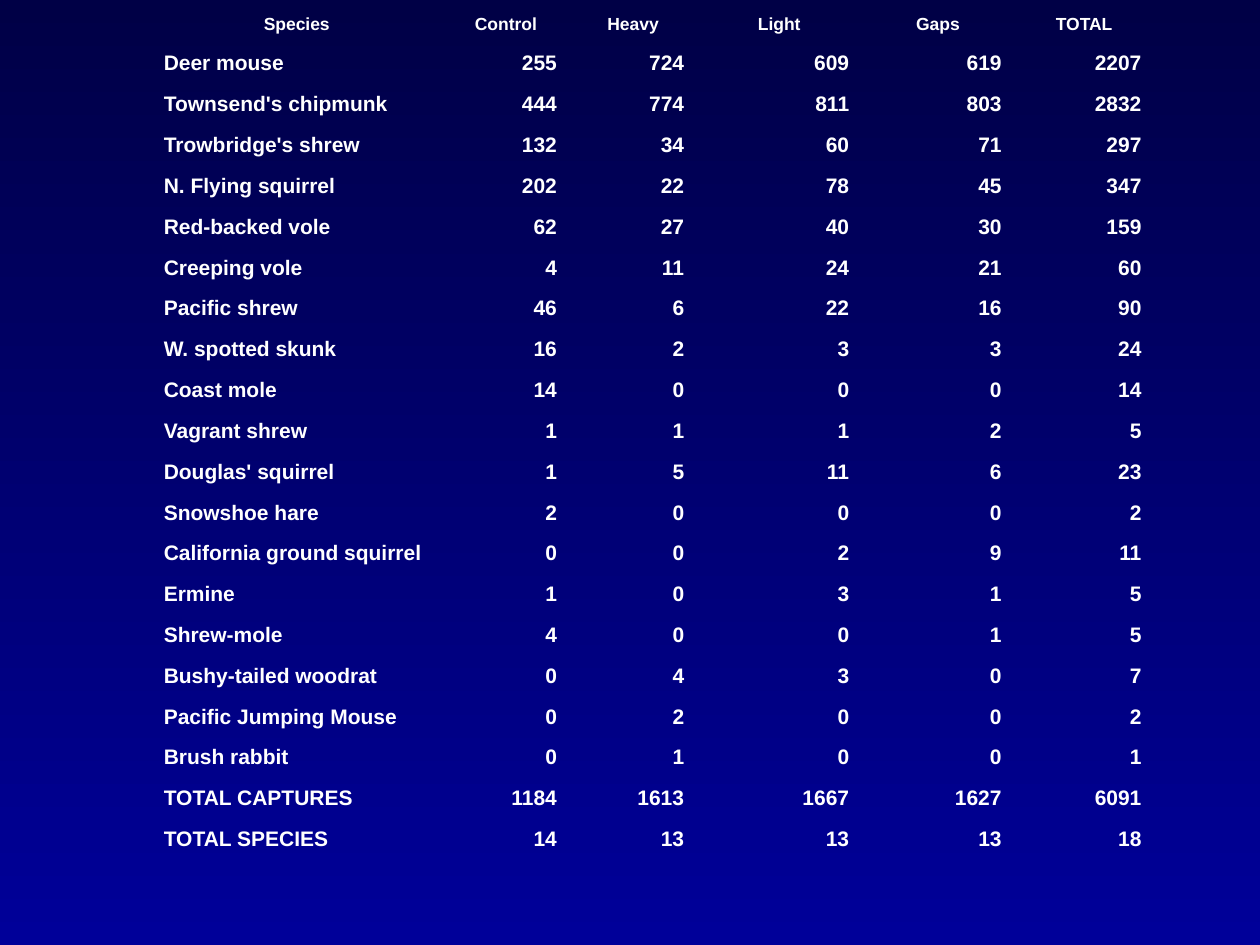
import pptx
import pptx.dml.color
import pptx.enum.text
import pptx.oxml
import pptx.oxml.ns
import pptx.util

Inches = pptx.util.Inches
Align = pptx.enum.text.PP_ALIGN

HEADINGS = ["Species", "Control", "Heavy", "Light", "Gaps", "TOTAL"]
CAPTURES = [
    ("Deer mouse", 255, 724, 609, 619, 2207),
    ("Townsend's chipmunk", 444, 774, 811, 803, 2832),
    ("Trowbridge's shrew", 132, 34, 60, 71, 297),
    ("N. Flying squirrel", 202, 22, 78, 45, 347),
    ("Red-backed vole", 62, 27, 40, 30, 159),
    ("Creeping vole", 4, 11, 24, 21, 60),
    ("Pacific shrew", 46, 6, 22, 16, 90),
    ("W. spotted skunk", 16, 2, 3, 3, 24),
    ("Coast mole", 14, 0, 0, 0, 14),
    ("Vagrant shrew", 1, 1, 1, 2, 5),
    ("Douglas' squirrel", 1, 5, 11, 6, 23),
    ("Snowshoe hare", 2, 0, 0, 0, 2),
    ("California ground squirrel", 0, 0, 2, 9, 11),
    ("Ermine", 1, 0, 3, 1, 5),
    ("Shrew-mole", 4, 0, 0, 1, 5),
    ("Bushy-tailed woodrat", 0, 4, 3, 0, 7),
    ("Pacific Jumping Mouse", 0, 2, 0, 0, 2),
    ("Brush rabbit", 0, 1, 0, 0, 1),
    ("TOTAL CAPTURES", 1184, 1613, 1667, 1627, 6091),
    ("TOTAL SPECIES", 14, 13, 13, 13, 18),
]
COLUMN_WIDTHS = [2.31, 1.01, 1.01, 1.31, 1.21, 1.11]
SLIDE_WIDTH, SLIDE_HEIGHT = 10, 7.5
TABLE_LEFT = 1.2
LAST_ROW_HEIGHT = 0.69  # the empty row that closes the table
NO_STYLE_NO_GRID = "{2D5ABB26-0587-4C30-8999-92F81FD0307C}"


def color(hex_string):
    return pptx.dml.color.RGBColor.from_string(hex_string)


def paint_background(slide):
    """Vertical gradient from a gamma-shaded navy down to plain navy."""
    fill = slide.background.fill
    fill.gradient()
    fill.gradient_angle = 270
    for stop in fill.gradient_stops:
        stop.color.rgb = color("000099")
    top_color = next(slide.element.iter(pptx.oxml.ns.qn("a:srgbClr")))
    for tag, value in (("gamma", ""), ("shade", 'val="46275"'), ("invGamma", "")):
        top_color.append(pptx.oxml.parse_xml(
            f'<a:{tag} {pptx.oxml.ns.nsdecls("a")} {value}/>'))


def write_cell(cell, text, size, alignment):
    cell.vertical_anchor = pptx.enum.text.MSO_ANCHOR.BOTTOM
    paragraph = cell.text_frame.paragraphs[0]
    paragraph.alignment = alignment
    run = paragraph.add_run()
    run.text = str(text)
    run.font.name = "Arial"
    run.font.size = pptx.util.Pt(size)
    run.font.bold = True
    run.font.color.rgb = color("FFFFFF")


def add_captures_table(slide):
    lines = [HEADINGS, *CAPTURES]
    captures = slide.shapes.add_table(
        len(lines) + 1, len(HEADINGS), Inches(TABLE_LEFT), 0,
        Inches(sum(COLUMN_WIDTHS)), Inches(SLIDE_HEIGHT)).table
    captures.first_row = captures.horz_banding = False
    next(slide.element.iter(pptx.oxml.ns.qn("a:tableStyleId"))).text = NO_STYLE_NO_GRID

    # Equal rows share what the closing row leaves over
    for column, width in zip(captures.columns, COLUMN_WIDTHS):
        column.width = Inches(width)
    for row in captures.rows:
        row.height = Inches((SLIDE_HEIGHT - LAST_ROW_HEIGHT) / len(lines))
    captures.rows[len(lines)].height = Inches(LAST_ROW_HEIGHT)

    for cell in captures.iter_cells():
        cell.fill.background()

    # Headings centred, species left, counts right
    for r, line in enumerate(lines):
        for c, text in enumerate(line):
            if r == 0:
                size, alignment = 10, Align.CENTER
            else:
                size, alignment = 12, Align.RIGHT if c else Align.LEFT
            write_cell(captures.cell(r, c), text, size, alignment)


def main():
    deck = pptx.Presentation()
    deck.slide_width = Inches(SLIDE_WIDTH)
    deck.slide_height = Inches(SLIDE_HEIGHT)
    slide = deck.slides.add_slide(deck.slide_layouts[6])
    paint_background(slide)
    add_captures_table(slide)
    deck.save("out.pptx")


if __name__ == "__main__":
    main()
